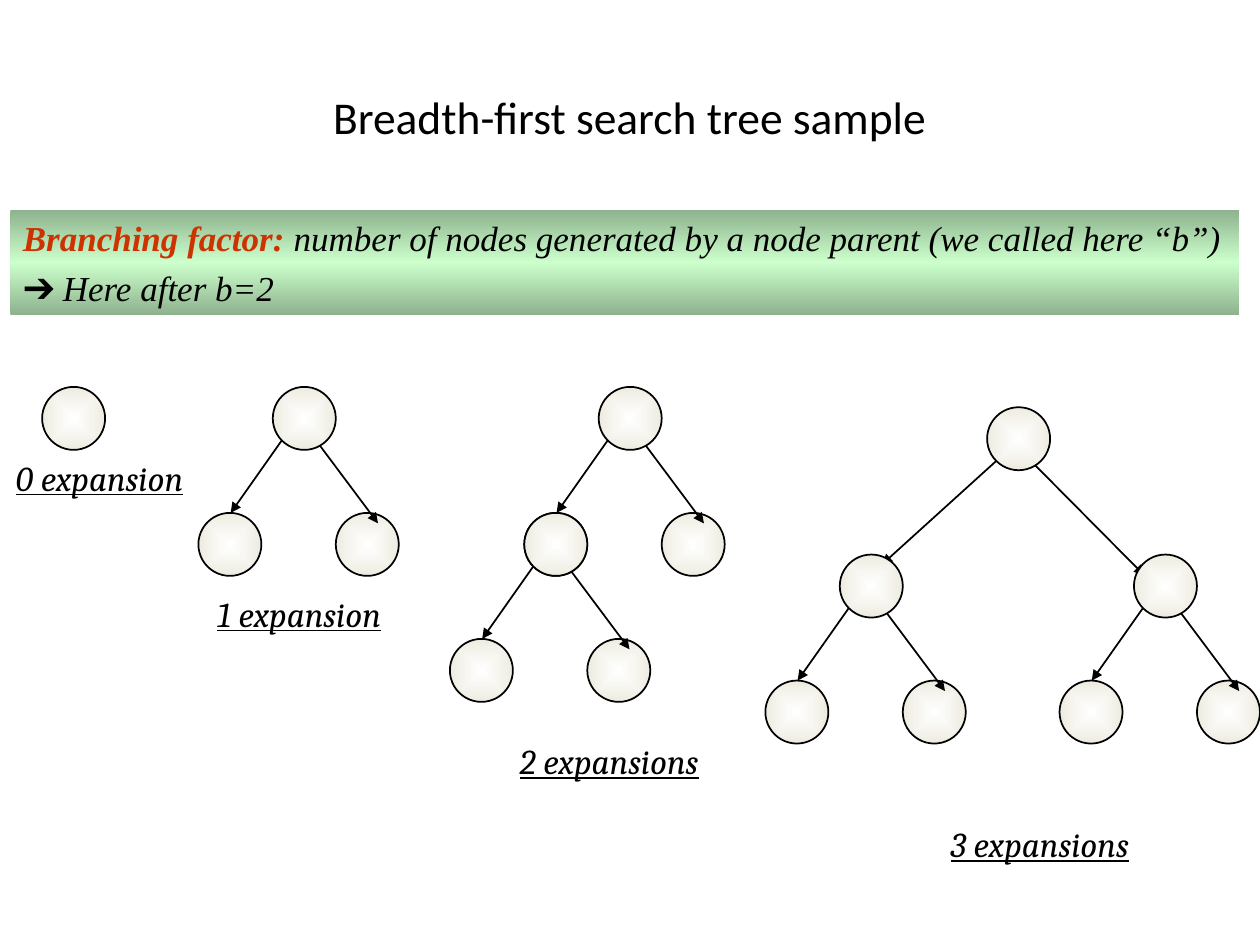
from dataclasses import dataclass

from lxml import etree
from pptx import Presentation
from pptx import util as u
from pptx.dml.color import RGBColor
from pptx.enum import shapes, text
from pptx.oxml import parse_xml
from pptx.oxml.ns import nsdecls, qn


@dataclass(frozen=True)
class Theme:
    ink: str = "000000"
    accent: str = "CC3300"
    node_stops: tuple = ((0, "FFFFFF"), (100, "EEECE1"))
    banner_stops: tuple = ((0, "8EB28E"), (50, "CCFFCC"), (100, "8EB28E"))
    title_font: str = "Calibri"
    label_font: str = "Cambria"
    banner_font: str = "Times New Roman"
    title_size: int = 26
    text_size: int = 20
    line_width: int = 1


RADIAL = ('<a:path path="shape"><a:fillToRect l="50000" t="50000" '
          'r="50000" b="50000"/></a:path>')
VERTICAL = '<a:lin ang="5400000" scaled="1"/>'
NODE_SIZE = 1.27

# Positions relative to the parent node's top-left corner, in cm
CHILDREN = ((-1.5, 2.54), (1.27, 2.54))
CHILD_ARROWS = ((0.2, 1.05, -0.85, 2.54), (0.85, 1.05, 2.12, 2.75))
WIDE_ARROWS = ((0.22, 1.05, -2.12, 3.17), (0.85, 1.05, 3.17, 3.39))


class TreeSlide:
    def __init__(self, slide, theme):
        self.slide = slide
        self.theme = theme

    def style(self, run, font, size, color=None, **flags):
        run.font.name = font
        run.font.size = u.Pt(size)
        run.font.color.rgb = RGBColor.from_string(color or self.theme.ink)
        for name, value in flags.items():
            setattr(run.font, name, value)

    def gradient(self, shape, stops, direction):
        stop_xml = "".join(
            f'<a:gs pos="{position * 1000}"><a:srgbClr val="{color}"/></a:gs>'
            for position, color in stops)
        shape.fill.background()
        properties = shape.element.spPr
        properties.replace(properties.find(qn("a:noFill")), parse_xml(
            f'<a:gradFill {nsdecls("a")} rotWithShape="1">'
            f'<a:gsLst>{stop_xml}</a:gsLst>{direction}</a:gradFill>'))

    def outline(self, shape):
        shape.line.color.rgb = RGBColor.from_string(self.theme.ink)
        shape.line.width = u.Pt(self.theme.line_width)

    def title(self, wording):
        title = self.slide.shapes.title
        title.left, title.top = u.Cm(1.27), u.Cm(0.76)
        title.width, title.height = u.Cm(22.86), u.Cm(3.18)
        title.text_frame.text = wording
        paragraph = title.text_frame.paragraphs[0]
        paragraph.alignment = text.PP_ALIGN.CENTER
        self.style(paragraph.runs[0], self.theme.title_font, self.theme.title_size)

    def node(self, left, top):
        node = self.slide.shapes.add_shape(
            shapes.MSO_SHAPE.OVAL, u.Cm(left), u.Cm(top),
            u.Cm(NODE_SIZE), u.Cm(NODE_SIZE))
        node.shadow.inherit = False
        self.gradient(node, self.theme.node_stops, RADIAL)
        self.outline(node)

    def arrows(self, left, top, offsets):
        for x1, y1, x2, y2 in offsets:
            arrow = self.slide.shapes.add_connector(
                shapes.MSO_CONNECTOR.STRAIGHT, u.Cm(left + x1), u.Cm(top + y1),
                u.Cm(left + x2), u.Cm(top + y2))
            self.outline(arrow)
            etree.SubElement(arrow.line._get_or_add_ln(),
                             qn("a:tailEnd")).set("type", "triangle")
            etree.SubElement(arrow.element.spPr, qn("a:effectLst"))

    def family(self, left, top):
        for dx, dy in CHILDREN:
            self.node(left + dx, top + dy)
        self.arrows(left, top, CHILD_ARROWS)
        self.node(left, top)

    def label(self, wording, left, top, width):
        box = self.slide.shapes.add_textbox(
            u.Cm(left), u.Cm(top), u.Cm(width), u.Cm(1.1))
        frame = box.text_frame
        frame.word_wrap = True
        frame.auto_size = text.MSO_AUTO_SIZE.SHAPE_TO_FIT_TEXT
        frame.text = wording
        paragraph = frame.paragraphs[0]
        paragraph.alignment = text.PP_ALIGN.CENTER
        self.style(paragraph.runs[0], self.theme.label_font,
                   self.theme.text_size, italic=True, underline=True)

    def banner(self, lines):
        banner = self.slide.shapes.add_shape(
            shapes.MSO_SHAPE.RECTANGLE, u.Cm(0.21), u.Cm(4.23),
            u.Cm(24.77), u.Cm(2.12))
        banner.shadow.inherit = False
        self.gradient(banner, self.theme.banner_stops, VERTICAL)
        banner.line.fill.background()
        frame = banner.text_frame
        frame.word_wrap = True
        frame.vertical_anchor = text.MSO_ANCHOR.MIDDLE
        for index, pieces in enumerate(lines):
            paragraph = frame.add_paragraph() if index else frame.paragraphs[0]
            paragraph.alignment = text.PP_ALIGN.LEFT
            paragraph.space_before = u.Pt(5 if index else 0)
            for wording, color, bold in pieces:
                run = paragraph.add_run()
                run.text = wording
                self.style(run, self.theme.banner_font, self.theme.text_size,
                           color, bold=bold, italic=True)


def main():
    presentation = Presentation()
    presentation.slide_width, presentation.slide_height = u.Cm(25.4), u.Cm(19.05)
    theme = Theme()
    page = TreeSlide(
        presentation.slides.add_slide(presentation.slide_layouts[5]), theme)
    page.title("Breadth-first search tree sample")

    # Zero and one expansion
    page.node(0.85, 7.8)
    page.family(5.5, 7.8)

    # Three expansions: the wide arrows end behind the second-level nodes
    page.arrows(19.9, 8.21, WIDE_ARROWS)
    page.node(19.9, 8.21)
    for left in (16.93, 22.86):
        page.family(left, 11.18)

    # Two expansions: the root's left child is the lower parent
    root_left, root_top = 12.07, 7.8
    dx, dy = CHILDREN[0]
    page.family(root_left + dx, root_top + dy)
    page.family(root_left, root_top)

    # Captions
    for caption in (("0 expansion", 0, 9.07, 4.02),
                    ("1 expansion", 4.02, 11.81, 4.02),
                    ("2 expansions", 9.95, 14.78, 4.66),
                    ("3 expansions", 18.63, 16.46, 4.66)):
        page.label(*caption)

    # Definition
    page.banner((
        (("Branching factor: ", theme.accent, True),
         ("number of nodes generated by a node parent (we called here “b”)",
          theme.ink, False)),
        (("➔ Here after b=2", theme.ink, False),)))

    presentation.save("out.pptx")


if __name__ == "__main__":
    main()
